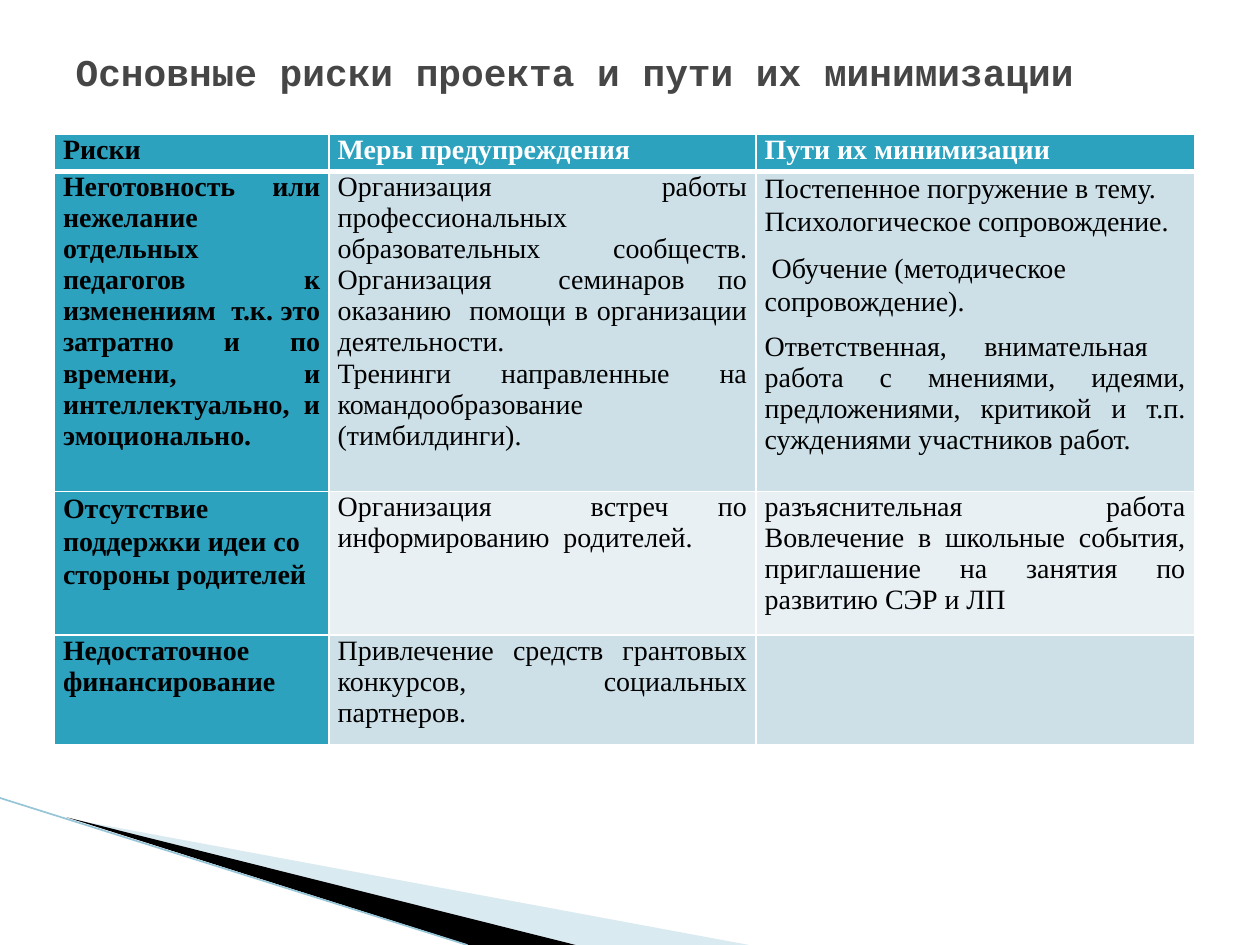
from lxml.etree import SubElement
from pptx import Presentation
from pptx.dml.color import RGBColor
from pptx.enum.text import MSO_ANCHOR, PP_ALIGN
from pptx.oxml.ns import qn
from pptx.util import Pt

HUES = {
    "white": "FFFFFF", "black": "000000", "title": "464646",
    "teal": "2DA2BF", "band": "CDE0E8", "pale": "E8F0F4",
    "wing": "A0CBDC", "edge": "97C5D8",
}
JUST, LEFT = PP_ALIGN.JUSTIFY, PP_ALIGN.LEFT
COLS = (157, 244, 250.5)
ROWS = (21, 183, 82, 62.5)
TEXTS = [
    [
        [("Риски ", JUST)],
        [("Меры предупреждения", JUST)],
        [("Пути их минимизации", JUST)],
    ],
    [
        [("Неготовность или нежелание отдельных педагогов к изменениям  т.к. это "
          "затратно и по времени, и интеллектуально, и эмоционально. ", JUST)],
        [("Организация  работы профессиональных  образовательных сообществ. "
          "Организация  семинаров по оказанию  помощи в организации деятельности. ", JUST),
         ("Тренинги  направленные  на командообразование (тимбилдинги).", JUST)],
        [("Постепенное погружение в тему.  Психологическое сопровождение.", LEFT),
         (" Обучение (методическое сопровождение).", LEFT),
         ("Ответственная, внимательная  работа с мнениями, идеями, предложениями, "
          "критикой и т.п. суждениями участников работ.", JUST)],
    ],
    [
        [("Отсутствие поддержки идеи со стороны родителей", LEFT)],
        [("Организация  встреч по информированию  родителей.", JUST)],
        [("разъяснительная работа Вовлечение в школьные события, приглашение "
          "на занятия по развитию СЭР и ЛП", JUST)],
    ],
    [
        [("Недостаточное финансирование ", JUST)],
        [("Привлечение средств грантовых конкурсов, социальных партнеров.", JUST)],
        [],
    ],
]


def hue(name):
    return RGBColor.from_string(HUES[name])


def add_run(para, text, face, size, tint, bold):
    run = para.add_run()
    run.text = text
    font = run.font
    font.name, font.size, font.bold = face, Pt(size), bold
    font.color.rgb = hue(tint)


def add_wing(slide, x, y, points, tint, alpha=None):
    spots = [(x + dx, y + dy) for dx, dy in points]
    form = slide.shapes.build_freeform(*spots[0], scale=Pt(1))
    form.add_line_segments(spots[1:], close=True)
    wing = form.convert_to_shape()
    wing.shadow.inherit = False
    wing.line.fill.background()
    wing.fill.solid()
    wing.fill.fore_color.rgb = hue(tint)
    if alpha:
        color = wing.fill._xPr.find(".//" + qn("a:srgbClr"))
        SubElement(color, qn("a:alpha"), val=str(alpha * 1000))


def add_decor(slide, x, y, wide, high):
    add_wing(slide, x, y, [(40, 12), (wide, high), (328, high)], "wing", 40)
    add_wing(slide, x, y, [(38, 11), (329, high), (268, high)], "black")
    edge = slide.shapes.add_connector(1, Pt(x), Pt(y), Pt(x + 267), Pt(y + high))
    edge.line.color.rgb = hue("edge")
    edge.line.width = Pt(0.95)
    SubElement(edge._element.spPr, qn("a:effectLst"))


def add_title(slide, x, y, wide, high):
    title = slide.shapes.title
    title.left, title.top, title.width, title.height = map(Pt, (x, y, wide, high))
    frame = title.text_frame
    frame.word_wrap = True
    frame.vertical_anchor = MSO_ANCHOR.TOP
    frame.margin_top = Pt(6)
    para = frame.paragraphs[0]
    para.alignment = LEFT
    add_run(para, "Основные риски проекта и пути их минимизации",
            "Courier New", 21.6, "title", True)


def set_edges(cell, row):
    props = cell._tc.get_or_add_tcPr()
    thick = {"lnT": row == 1, "lnB": row == 0}
    for spot, side in enumerate(("lnL", "lnR", "lnT", "lnB")):
        size = Pt(3 if thick.get(side) else 1)
        line = SubElement(props, qn("a:" + side), w=str(size))
        fill = SubElement(line, qn("a:solidFill"))
        SubElement(fill, qn("a:srgbClr"), val=HUES["white"])
        props.remove(line)
        props.insert(spot, line)


def fill_cell(cell, row, col, texts):
    side = row == 0 or col == 0
    cell.margin_left = cell.margin_right = Pt(5)
    cell.margin_top = cell.margin_bottom = 0
    cell.fill.solid()
    cell.fill.fore_color.rgb = hue("teal" if side else "band" if row % 2 else "pale")
    set_edges(cell, row)
    tint = "white" if row == 0 and col else "black"
    frame = cell.text_frame
    for spot, (text, align) in enumerate(texts):
        para = frame.add_paragraph() if spot else frame.paragraphs[0]
        para.alignment = align
        if align == LEFT:
            para.line_spacing = 1.06
            para.space_after = Pt(8)
        add_run(para, text, "Times New Roman", 16, tint, side)


def add_risks(slide, x, y):
    frame = slide.shapes.add_table(len(ROWS), len(COLS), Pt(x), Pt(y),
                                   Pt(sum(COLS)), Pt(sum(ROWS)))
    table = frame.table
    for col, wide in enumerate(COLS):
        table.columns[col].width = Pt(wide)
    for row, high in enumerate(ROWS):
        table.rows[row].height = Pt(high)
        for col, texts in enumerate(TEXTS[row]):
            fill_cell(table.cell(row, col), row, col, texts)


def main():
    deck = Presentation()
    deck.slide_width, deck.slide_height = Pt(720), Pt(540)
    slide = deck.slides.add_slide(deck.slide_layouts[5])
    add_decor(slide, 0, 456, 428, 84)
    add_risks(slide, 31, 77)
    add_title(slide, 36, 21.6, 648, 61.2)
    deck.save("out.pptx")


if __name__ == "__main__":
    main()
